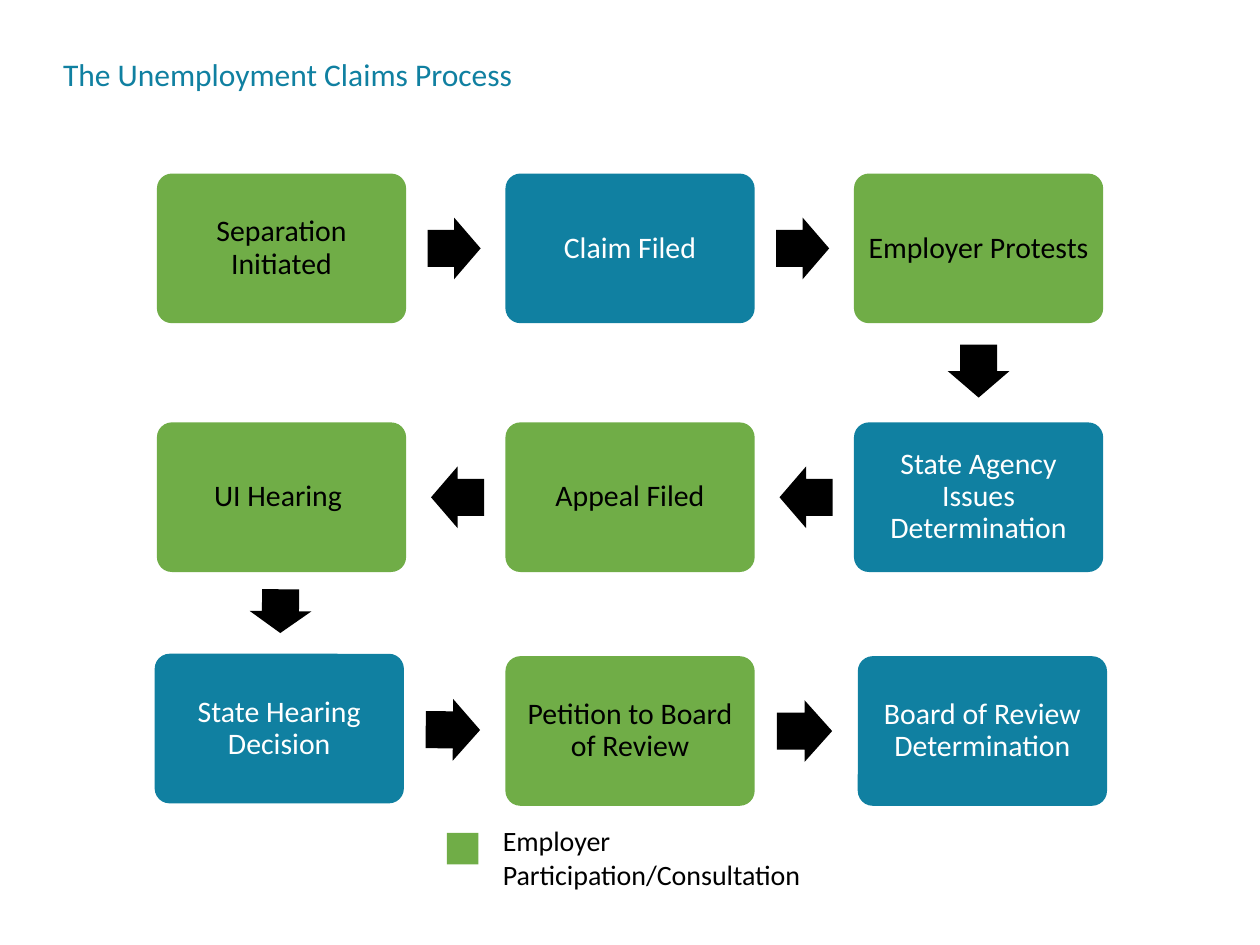
from math import atan2, degrees, hypot
from itertools import pairwise

from pptx import Presentation
from pptx.dml.color import RGBColor
from pptx.enum.shapes import MSO_SHAPE
from pptx.enum.text import MSO_ANCHOR, MSO_AUTO_SIZE, PP_ALIGN
from pptx.util import Pt

GREEN = RGBColor(0x70, 0xAD, 0x47)
TEAL = RGBColor(0x10, 0x80, 0xA1)
BLACK = RGBColor(0, 0, 0)
WHITE = RGBColor(0xFF, 0xFF, 0xFF)
FONT = "Calibri"

STEP_WIDTH, STEP_HEIGHT = 142.4, 85.5
COLUMN_PITCH = 199.15
ARROW_WIDTH = 35.3
ARROW_SHARE = 0.535  # part of the gap between two steps that an arrow fills

# Label, employer takes part, left and top within the flow
STEPS = [
    ("Separation Initiated", True, 0, 0),
    ("Claim Filed", False, COLUMN_PITCH, 0),
    ("Employer Protests", True, 2 * COLUMN_PITCH, 0),
    ("State Agency Issues Determination", False, 2 * COLUMN_PITCH, 142.2),
    ("Appeal Filed", True, COLUMN_PITCH, 142.2),
    ("UI Hearing ", True, 0, 142.2),
    ("State Hearing Decision", False, -1.3, 274.4),
    ("Petition to Board of Review", True, COLUMN_PITCH, 275.8),
    ("Board of Review Determination", False, 400.5, 275.8),
]


def write_text(frame, text, size=17, color=BLACK, align=PP_ALIGN.LEFT,
               anchor=MSO_ANCHOR.TOP, line_spacing=1.0, margin=None):
    frame.word_wrap = True
    frame.auto_size = MSO_AUTO_SIZE.NONE
    frame.vertical_anchor = anchor
    if margin is not None:
        frame.margin_left = frame.margin_right = Pt(margin)
        frame.margin_top = frame.margin_bottom = Pt(margin)
    frame.text = text
    for paragraph in frame.paragraphs:
        paragraph.alignment = align
        paragraph.line_spacing = line_spacing
        paragraph.space_before = Pt(0)
        paragraph.font.name = FONT
        paragraph.font.size = Pt(size)
        paragraph.font.color.rgb = color


def add_block(slide, preset, left, top, width, height, fill):
    block = slide.shapes.add_shape(preset, Pt(left), Pt(top), Pt(width), Pt(height))
    block.shadow.inherit = False
    block.fill.solid()
    block.fill.fore_color.rgb = fill
    block.line.fill.background()
    return block


def add_step(slide, label, by_employer, left, top):
    step = add_block(slide, MSO_SHAPE.ROUNDED_RECTANGLE, left, top,
                     STEP_WIDTH, STEP_HEIGHT, GREEN if by_employer else TEAL)
    step.adjustments[0] = 0.1
    write_text(step.text_frame, label, color=BLACK if by_employer else WHITE,
               align=PP_ALIGN.CENTER, anchor=MSO_ANCHOR.MIDDLE,
               line_spacing=0.9, margin=5.1)


def add_step_arrow(slide, start, end):
    """Point from one step to the next, given the top left corners of both."""
    dx, dy = end[0] - start[0], end[1] - start[1]
    distance = hypot(dx, dy)
    gap = distance - (STEP_WIDTH if abs(dx) > abs(dy) else STEP_HEIGHT)
    length = gap * ARROW_SHARE
    along = 0.5 - 1 / distance  # one point short of halfway
    center_x = start[0] + STEP_WIDTH / 2 + dx * along
    center_y = start[1] + STEP_HEIGHT / 2 + dy * along
    arrow = add_block(slide, MSO_SHAPE.RIGHT_ARROW, center_x - length / 2,
                      center_y - ARROW_WIDTH / 2, length, ARROW_WIDTH, BLACK)
    arrow.adjustments[0] = 0.6
    arrow.adjustments[1] = 0.5
    arrow.rotation = degrees(atan2(dy, dx))


def add_flow(slide, left, top):
    corners = [(left + x, top + y) for _, _, x, y in STEPS]
    for (label, by_employer, _, _), corner in zip(STEPS, corners):
        add_step(slide, label, by_employer, *corner)
    for start, end in pairwise(corners):
        add_step_arrow(slide, start, end)


def add_legend(slide, left, top, width, height):
    add_block(slide, MSO_SHAPE.RECTANGLE, left, top + 8.6, 18, 18, GREEN)
    caption = slide.shapes.add_textbox(Pt(left + 24.8), Pt(top),
                                       Pt(width - 24.8), Pt(height))
    write_text(caption.text_frame, "Employer\nParticipation/Consultation", size=16)


def place_title(slide, left, top, width, height):
    title = slide.shapes.title
    title.left, title.top = Pt(left), Pt(top)
    title.width, title.height = Pt(width), Pt(height)
    write_text(title.text_frame, "The Unemployment Claims Process",
               size=18, color=TEAL)


def main():
    deck = Presentation()
    deck.slide_width, deck.slide_height = Pt(720), Pt(540)
    slide = deck.slides.add_slide(deck.slide_layouts[5])
    place_title(slide, 28.8, 28.1, 292.3, 28.8)
    add_flow(slide, 89.7, 99.2)
    add_legend(slide, 255.4, 467.3, 211.3, 65.5)
    deck.save("out.pptx")


if __name__ == "__main__":
    main()
